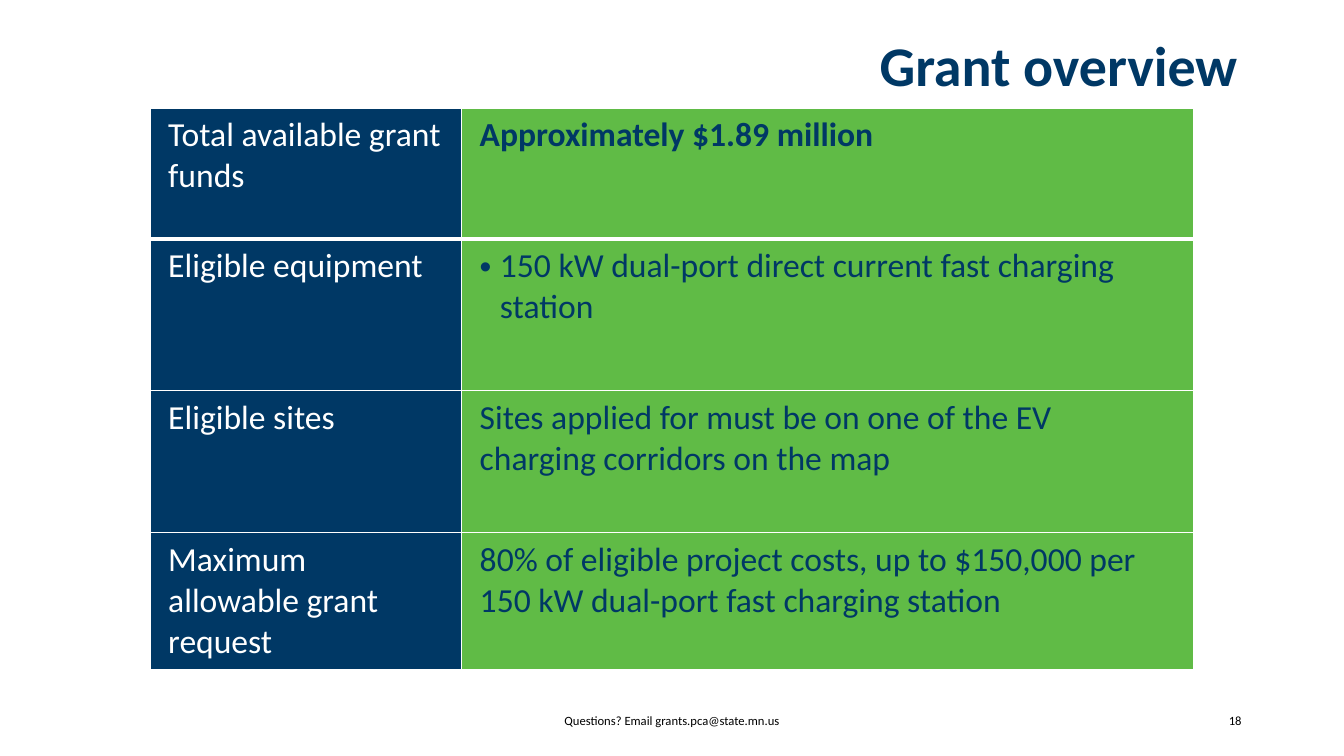
from lxml import etree
from pptx import Presentation, util as u
from pptx.dml import color
from pptx.enum import text
from pptx.oxml import ns

NAVY, GREEN, WHITE, BLACK = "003865", "60BB46", "FFFFFF", "000000"
FONT = "Calibri"
TITLE = "Grant overview"
FOOTER = "Questions? Email grants.pca@state.mn.us"
PAGE_NUMBER = "18"
ROWS = [
    ("Total available grant funds", "Approximately $1.89 million", {"bold": True}),
    ("Eligible equipment", "150 kW dual-port direct current fast charging station", {"bullet": True}),
    ("Eligible sites", "Sites applied for must be on one of the EV charging corridors on the map", {}),
    ("Maximum allowable grant request",
     "80% of eligible project costs, up to $150,000 per 150 kW dual-port fast charging station", {}),
]
ROW_HEIGHTS = (3.3, 3.81, 3.58, 3.38)
COLUMN_WIDTHS = (7.85, 18.44)
TABLE_LEFT, TABLE_TOP = 3.78, 2.72
FOOTER_TOP, FOOTER_HEIGHT = 17.65, 1.02


def rgb(value):
    return color.RGBColor.from_string(value)


def write(frame, words, size=24, ink=NAVY, bold=False, align=text.PP_ALIGN.LEFT, bullet=False):
    para = frame.paragraphs[0]
    para.alignment = align
    span = para.add_run()
    span.text = words
    span.font.name = FONT
    span.font.size = u.Pt(size)
    span.font.bold = bold
    span.font.color.rgb = rgb(ink)
    if bullet:
        props = para._p.get_or_add_pPr()
        props.set("marL", str(u.Cm(0.51)))
        props.set("indent", str(-u.Cm(0.51)))
        etree.SubElement(props, ns.qn("a:buFont"), typeface="Arial")
        etree.SubElement(props, ns.qn("a:buChar"), char="•")


def add_text(page, left, top, width, height, words, wrap=True, anchor=text.MSO_ANCHOR.MIDDLE, **style):
    box = page.shapes.add_textbox(*(u.Cm(n) for n in (left, top, width, height)))
    frame = box.text_frame
    frame.word_wrap = wrap
    frame.vertical_anchor = anchor
    write(frame, words, **style)
    return frame


def draw_borders(cell, widths):
    props = cell._tc.get_or_add_tcPr()
    for position, (side, width) in enumerate(zip("LRTB", widths)):
        line = etree.Element(ns.qn("a:ln" + side), w=str(u.Pt(width)))
        fill = etree.SubElement(line, ns.qn("a:solidFill"))
        etree.SubElement(fill, ns.qn("a:srgbClr"), val=WHITE)
        props.insert(position, line)


def fill_cell(cell, words, fill, borders, **style):
    cell.margin_left = cell.margin_right = u.Cm(0.46)
    cell.margin_top = cell.margin_bottom = u.Cm(0.18)
    cell.fill.solid()
    cell.fill.fore_color.rgb = rgb(fill)
    draw_borders(cell, borders)
    write(cell.text_frame, words, **style)


def add_grant_table(page):
    grid = page.shapes.add_table(
        len(ROWS), len(COLUMN_WIDTHS), u.Cm(TABLE_LEFT), u.Cm(TABLE_TOP),
        u.Cm(sum(COLUMN_WIDTHS)), u.Cm(sum(ROW_HEIGHTS))).table
    for column, width in zip(grid.columns, COLUMN_WIDTHS):
        column.width = u.Cm(width)
    for index, (label, detail, style) in enumerate(ROWS):
        grid.rows[index].height = u.Cm(ROW_HEIGHTS[index])
        borders = (1, 1, 3 if index == 1 else 1, 3 if index == 0 else 1)
        fill_cell(grid.cell(index, 0), label, NAVY, borders, ink=WHITE)
        fill_cell(grid.cell(index, 1), detail, GREEN, borders, **style)


def main():
    deck = Presentation()
    deck.slide_width, deck.slide_height = u.Cm(33.87), u.Cm(19.05)
    page = deck.slides.add_slide(deck.slide_layouts[6])
    add_grant_table(page)
    title = add_text(page, 21.92, 0.64, 9.63, 1.96, TITLE, wrap=False,
                     anchor=text.MSO_ANCHOR.TOP, size=40, bold=True)
    title.auto_size = text.MSO_AUTO_SIZE.SHAPE_TO_FIT_TEXT
    add_text(page, 9.17, FOOTER_TOP, 15.52, FOOTER_HEIGHT, FOOTER,
             size=9, ink=BLACK, align=text.PP_ALIGN.CENTER)
    add_text(page, 27.48, FOOTER_TOP, 4.06, FOOTER_HEIGHT, PAGE_NUMBER,
             size=9, ink=BLACK, align=text.PP_ALIGN.RIGHT)
    deck.save("out.pptx")


if __name__ == "__main__":
    main()
